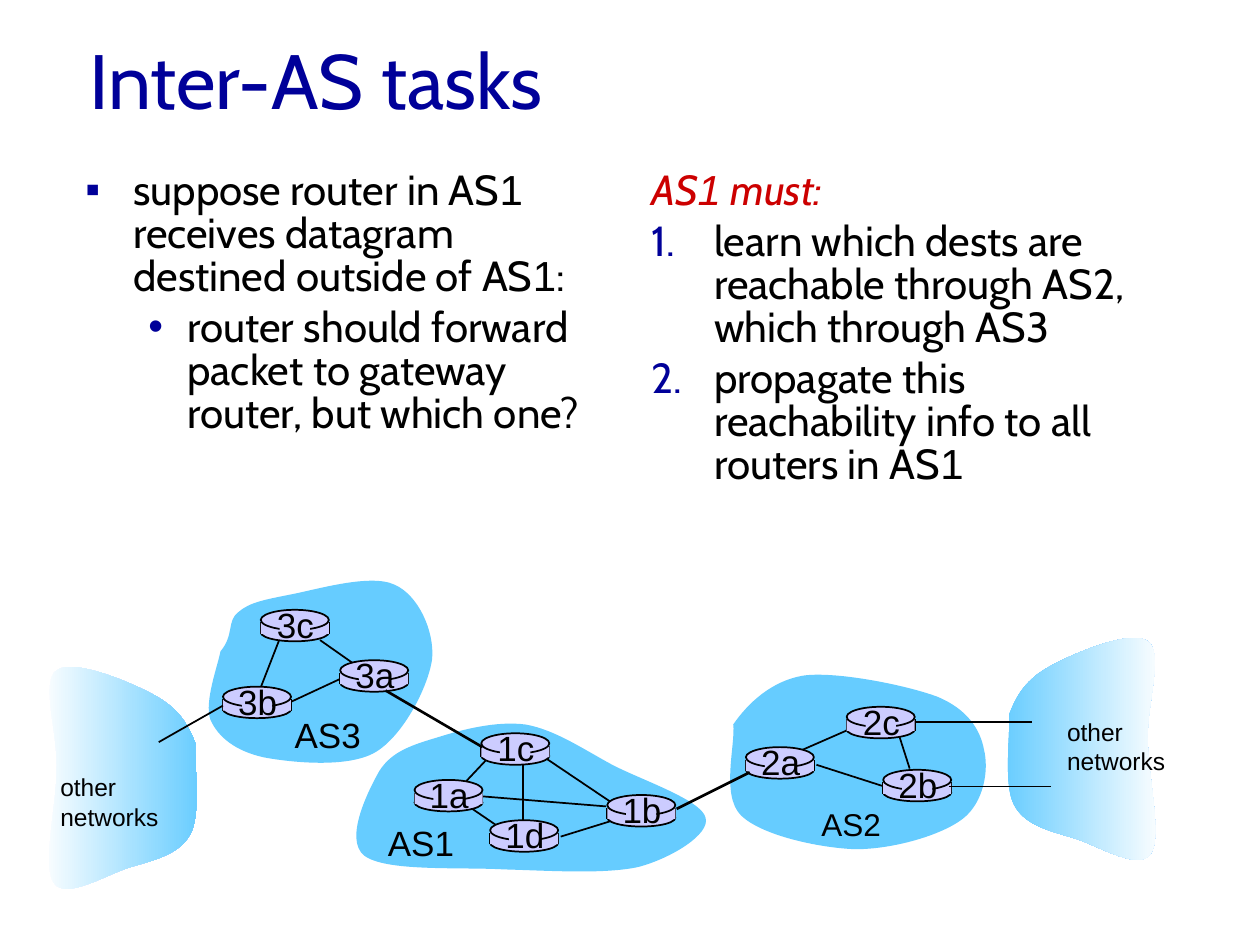
from lxml import etree
from pptx import Presentation
from pptx.dml.color import RGBColor
from pptx.enum.shapes import MSO_CONNECTOR, MSO_SHAPE
from pptx.enum.text import MSO_ANCHOR, MSO_AUTO_SIZE, PP_ALIGN
from pptx.oxml.ns import qn
from pptx.util import Pt

PX = 9144
LINE, RECT, OVAL = MSO_CONNECTOR.STRAIGHT, MSO_SHAPE.RECTANGLE, MSO_SHAPE.OVAL
LEFT, MID, CENTER = PP_ALIGN.LEFT, MSO_ANCHOR.MIDDLE, PP_ALIGN.CENTER
FIXED = MSO_AUTO_SIZE.NONE
NAVY, RED, SKY, LILAC = "000099", "CC0000", "66CCFF", "CCCCFF"
BLACK, WHITE = "000000", "FFFFFF"
SANS, HEAD = "Arial", "Cabin"

FUNNEL = [(5, 68), (11, 52), (19, 40), (37, 30), (55, 20), (102, 0), (115, 10),
          (128, 19), (114, 60), (115, 88), (115, 117), (127, 166), (117, 179),
          (108, 192), (77, 173), (59, 167), (40, 161), (18, 157), (9, 140),
          (0, 124), (6, 83), (5, 68)]
AREAS = [
    {"name": "AS3", "at": (162, 455), "label": (62, 106, 73, 43), "size": 20,
     "edge": [(13, 62), (24, 49), (18, 38), (27, 31), (36, 23), (48, 21), (68, 17),
              (89, 13), (132, 0), (151, 9), (170, 17), (183, 46), (181, 68),
              (178, 90), (158, 129), (136, 142), (114, 155), (68, 150), (47, 146),
              (25, 141), (11, 130), (5, 116), (0, 102), (11, 73), (13, 62)],
     "links": [(69, 102, 112, 82), (119, 72, 92, 53), (60, 52, 44, 93)],
     "nodes": {"3b": (15, 90), "3c": (45, 29), "3a": (108, 69)}},
    {"name": "AS1", "at": (273, 572), "label": (25, 75, 73, 43), "size": 20,
     "edge": [(28, 40), (38, 24), (55, 19), (75, 13), (94, 7), (121, 0), (144, 3),
              (167, 7), (189, 22), (213, 35), (236, 47), (284, 63), (287, 77),
              (291, 90), (260, 109), (234, 116), (207, 122), (163, 119), (127, 118),
              (91, 116), (33, 120), (16, 107), (0, 94), (19, 56), (28, 40)],
     "links": [(114, 30, 97, 48), (142, 34, 142, 84), (159, 29, 214, 66),
               (214, 79, 172, 92), (208, 68, 109, 60), (99, 68, 121, 83)],
     "nodes": {"1c": (109, 10), "1a": (56, 47), "1d": (116, 79), "1b": (209, 59)}},
    {"name": "AS2", "at": (572, 533), "label": (70, 101, 67, 40), "size": 18,
     "edge": [(10, 42), (21, 26), (40, 7), (67, 3), (94, 0), (148, 11), (172, 20),
              (196, 30), (206, 46), (209, 62), (213, 78), (209, 104), (192, 117),
              (175, 130), (137, 141), (107, 141), (78, 140), (32, 130), (16, 114),
              (0, 98), (12, 57), (10, 42)],
     "links": [(56, 66, 104, 45), (76, 74, 129, 91), (142, 52, 150, 77)],
     "nodes": {"2a": (20, 60), "2c": (100, 28), "2b": (129, 78)}},
]
TRUNKS = [((726, 573, 819, 573), 0.75), ((753, 624, 834, 624), 0.75),
          ((177, 560, 126, 589), 1), ((537, 642, 595, 613), 1.5),
          ((306, 548, 383, 593), 1.5)]


def px(*sizes):
    """Turn px into EMU."""
    return [size * PX for size in sizes]


def tint(code):
    """Make a colour from a hex string."""
    return RGBColor.from_string(code)


def run(para, text, size, color=BLACK, face=SANS, slant=False):
    """Add one run of text."""
    part = para.add_run()
    part.text = text
    font = part.font
    font.size, font.name, font.italic = Pt(size), face, slant
    font.color.rgb = tint(color)


def link(shapes, ends, width=1):
    """Draw a black line."""
    line = shapes.add_connector(LINE, *px(*ends))
    line.line.color.rgb = tint(BLACK)
    line.line.width = Pt(width)
    etree.SubElement(line._element.spPr, qn("a:effectLst"))


def solid(shapes, kind, box, edge=False):
    """Add a lilac router part."""
    shape = shapes.add_shape(kind, *px(*box))
    shape.shadow.inherit = False
    shape.fill.solid()
    shape.fill.fore_color.rgb = tint(LILAC)
    if edge:
        shape.line.color.rgb = tint(BLACK)
        shape.line.width = Pt(1)
    else:
        shape.line.fill.background()


def label(shapes, box, lines, size, align=LEFT):
    """Write short lines that do not wrap."""
    frame = shapes.add_textbox(*px(*box)).text_frame
    frame.word_wrap = False
    for i, text in enumerate(lines):
        para = frame.add_paragraph() if i else frame.paragraphs[0]
        para.alignment = align
        run(para, text, size)


def bend(shape):
    """Turn each three straight segments into one cubic curve."""
    legs = list(shape._element.iter(qn("a:lnTo")))
    for i in range(0, len(legs), 3):
        curve = etree.Element(qn("a:cubicBezTo"))
        legs[i].addprevious(curve)
        for leg in legs[i:i + 3]:
            curve.append(leg[0])
            leg.getparent().remove(leg)


def blob(shapes, left, top, knots):
    """Add a smooth closed outline without a line."""
    spots = [px(left + x, top + y) for x, y in knots]
    pen = shapes.build_freeform(*spots[0])
    pen.add_line_segments(spots[1:], close=True)
    shape = pen.convert_to_shape()
    bend(shape)
    shape.shadow.inherit = False
    shape.line.fill.background()
    return shape


def router(slide, x, y, name):
    """Build a named router disc as a group."""
    shapes = slide.shapes.add_group_shape().shapes
    solid(shapes, OVAL, (x, y + 11, 54, 14), True)
    for side in (x, x + 54):
        link(shapes, (side, y + 10, side, y + 19))
    solid(shapes, RECT, (x, y + 10, 54, 9))
    solid(shapes, OVAL, (x, y, 54, 16), True)
    solid(shapes, RECT, (x + 15, y + 2, 24, 21))
    label(shapes, (x + 2, y - 10, 51, 43), [name], 20, CENTER)


def area(slide, data):
    """Draw one system with its links and routers."""
    left, top = data["at"]
    fill = blob(slide.shapes, left, top, data["edge"]).fill
    fill.solid()
    fill.fore_color.rgb = tint(SKY)
    x, y, wide, high = data["label"]
    label(slide.shapes, (left + x, top + y, wide, high), [data["name"]], data["size"])
    for a, b, c, d in data["links"]:
        link(slide.shapes, (left + a, top + b, left + c, top + d))
    for name, (x, y) in data["nodes"].items():
        router(slide, left + x, top + y, name)


def funnel(slide, left, top, x, y, flip=False):
    """Draw a fading cloud of other networks."""
    knots = [(128 - a, b) for a, b in FUNNEL] if flip else FUNNEL
    fill = blob(slide.shapes, left, top, knots).fill
    fill.gradient()
    fill.gradient_angle = 0
    for stop, code in zip(fill.gradient_stops, (WHITE, SKY) if flip else (SKY, WHITE)):
        stop.color.rgb = tint(code)
    label(slide.shapes, (left + x, top + y, 98, 57), ["other", "networks"], 14)


def bullet(para, margin, hang, mark):
    """Set the indent and the bullet or number."""
    props = para._p.get_or_add_pPr()
    props.set("marL", str(margin * PX))
    props.set("indent", str(-hang * PX))
    if not mark:
        etree.SubElement(props, qn("a:buNone"))
        return
    color = etree.SubElement(props, qn("a:buClr"))
    etree.SubElement(color, qn("a:srgbClr"), val=NAVY)
    if mark == "1.":
        etree.SubElement(props, qn("a:buAutoNum"), type="arabicPeriod")
    else:
        etree.SubElement(props, qn("a:buFont"), typeface=SANS)
        etree.SubElement(props, qn("a:buChar"), char=mark)


def column(slide, box, items):
    """Write a column of bulleted paragraphs."""
    frame = slide.shapes.add_textbox(*px(*box)).text_frame
    frame.word_wrap = True
    for i, (level, margin, hang, mark, color, parts) in enumerate(items):
        para = frame.add_paragraph() if i else frame.paragraphs[0]
        bullet(para, margin, hang, mark)
        para.level, para.line_spacing = level, 0.85
        if i:
            para.space_before = Pt(4.8)
        for text in parts:
            run(para, text, 24, color, SANS if text == "1" else HEAD, color == RED)


def heading(slide, box, text):
    """Place and fill the title."""
    title = slide.shapes.title
    title.left, title.top, title.width, title.height = px(*box)
    frame = title.text_frame
    frame.auto_size, frame.vertical_anchor = FIXED, MID
    para = frame.paragraphs[0]
    para.alignment = LEFT
    run(para, text, 44, NAVY, HEAD)


def main():
    """Build and save the slide."""
    deck = Presentation()
    deck.slide_width, deck.slide_height = px(1000, 750)
    slide = deck.slides.add_slide(deck.slide_layouts[5])
    heading(slide, (61, 0, 850, 125), "Inter-AS tasks")
    column(slide, (58, 131, 417, 319), [
        (0, 38, 38, "▪", BLACK, ["suppose router in AS", "1",
                                 " receives datagram destined outside of AS", "1", ":"]),
        (1, 81, 31, "•", BLACK,
         ["router should forward packet to gateway router, but which one?"])])
    column(slide, (507, 131, 417, 508), [
        (0, 50, 50, "", RED, ["AS", "1", " must:"]),
        (0, 50, 50, "1.", BLACK,
         ["learn which dests are reachable through AS2, which through AS3"]),
        (0, 50, 50, "1.", BLACK,
         ["propagate this reachability info to all routers in AS", "1"])])
    funnel(slide, 796, 499, 41, 65)
    funnel(slide, 32, 522, 6, 86, True)
    for data in AREAS:
        area(slide, data)
    for ends, width in TRUNKS:
        link(slide.shapes, ends, width)
    deck.save("out.pptx")


if __name__ == "__main__":
    main()
